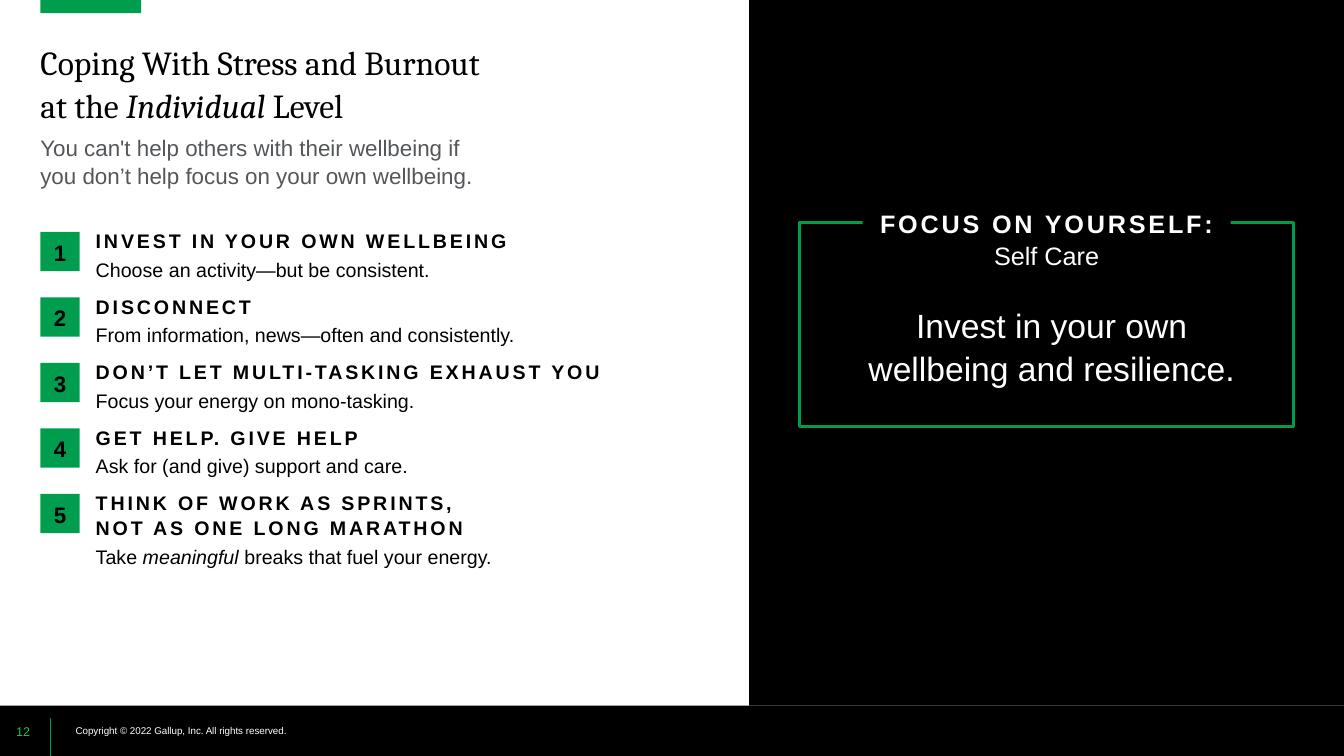
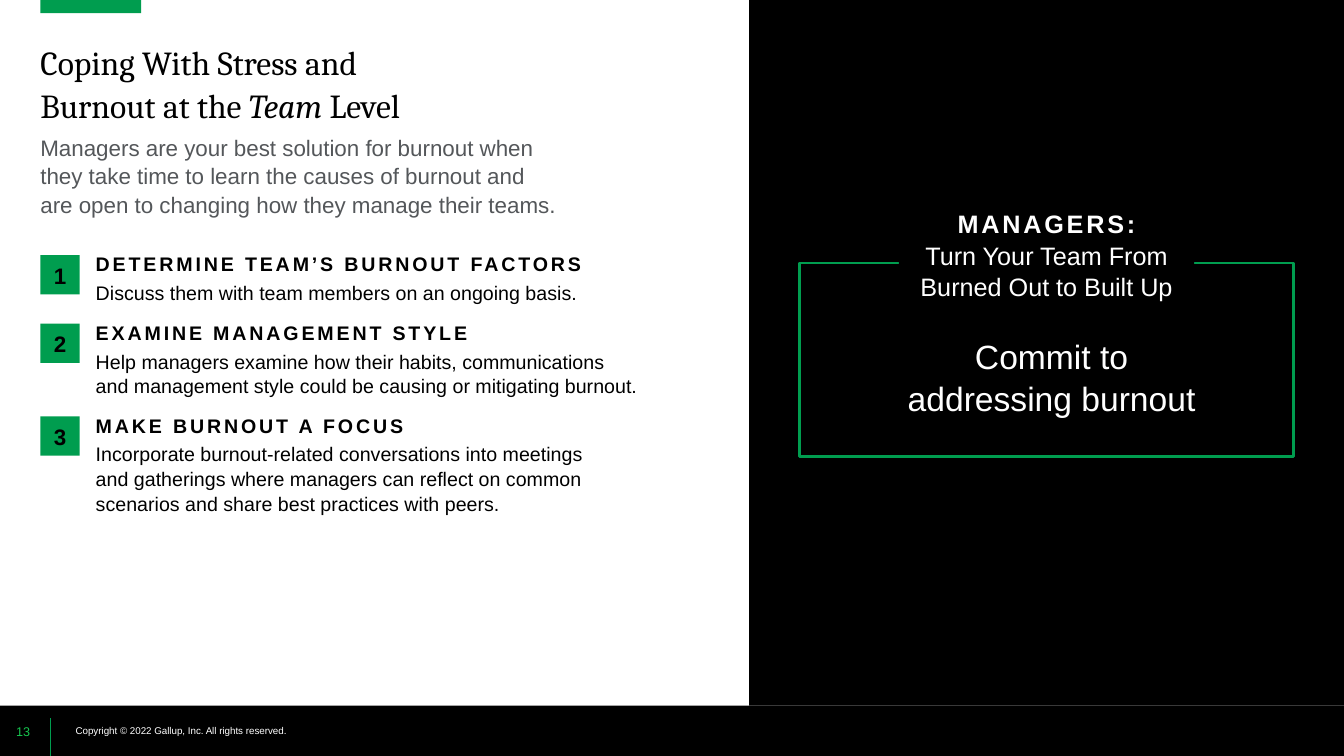
from lxml import etree
from pptx import Presentation
from pptx.dml.color import RGBColor
from pptx.enum.shapes import MSO_CONNECTOR, MSO_SHAPE
from pptx.enum.text import MSO_ANCHOR as Anchor, MSO_AUTO_SIZE as Fit, PP_ALIGN as Align
from pptx.oxml.ns import qn
from pptx.util import Inches, Pt

GREEN = RGBColor(0x00, 0x9D, 0x4F)
LIME = RGBColor(0x16, 0xC6, 0x4F)
BLACK = RGBColor(0, 0, 0)
WHITE = RGBColor(0xFF, 0xFF, 0xFF)
GRAY = RGBColor(0x54, 0x57, 0x5A)

LEFT = 0.4
MID = 10.38
LEAD = 1.05
BADGE = 0.39
LINE = 0.24
COPY = "Copyright © 2022 Gallup, Inc. All rights reserved."

SLIDES = [
    {
        "page": "12",
        "title": "Coping With Stress and Burnout\vat the *Individual* Level",
        "intro": "You can't help others with their wellbeing if\v"
                 "you don’t help focus on your own wellbeing.",
        "top": 2.26,
        "gap": 0.14,
        "items": [
            ("INVEST IN YOUR OWN WELLBEING", "Choose an activity—but be consistent."),
            ("DISCONNECT", "From information, news—often and consistently."),
            ("DON’T LET MULTI-TASKING EXHAUST YOU", "Focus your energy on mono-tasking."),
            ("GET HELP. GIVE HELP", "Ask for (and give) support and care."),
            ("THINK OF WORK AS SPRINTS,\vNOT AS ONE LONG MARATHON",
             "Take *meaningful* breaks that fuel your energy."),
        ],
        "label": ("FOCUS ON YOURSELF:", "Self Care"),
        "wide": 3.65,
        "box": (2.21, 2.02, 0.8),
        "goal": "Invest in your own wellbeing and resilience.",
    },
    {
        "page": "13",
        "title": "Coping With Stress and\vBurnout at the *Team* Level",
        "intro": "Managers are your best solution for burnout when\v"
                 "they take time to learn the causes of burnout and\v"
                 "are open to changing how they manage their teams.",
        "top": 2.49,
        "gap": 0.17,
        "items": [
            ("DETERMINE TEAM’S BURNOUT FACTORS",
             "Discuss them with team members on an ongoing basis."),
            ("EXAMINE MANAGEMENT STYLE",
             "Help managers examine how their habits, communications\v"
             "and management style could be causing or mitigating burnout."),
            ("MAKE BURNOUT A FOCUS",
             "Incorporate burnout-related conversations into meetings\v"
             "and gatherings where managers can reflect on common\v"
             "scenarios and share best practices with peers."),
        ],
        "label": ("MANAGERS:", "Turn Your Team From\vBurned Out to Built Up"),
        "wide": 2.93,
        "box": (2.61, 1.92, 0.7),
        "goal": "Commit to\vaddressing burnout",
    },
]


def place(shape, x, y, w, h):
    shape.left, shape.top = Inches(x), Inches(y)
    shape.width, shape.height = Inches(w), Inches(h)


def setup(shape, anchor=Anchor.TOP, inset=(0, 0, 0, 0), wrap=True):
    frame = shape.text_frame
    frame.auto_size = Fit.NONE
    frame.word_wrap = wrap
    frame.vertical_anchor = anchor
    sides = ("margin_left", "margin_top", "margin_right", "margin_bottom")
    for side, size in zip(sides, inset):
        setattr(frame, side, Inches(size))
    return frame


def write(par, text, size, color, font="Arial", bold=False, track=0, align=Align.LEFT):
    for part, words in enumerate(text.split("*")):
        for row, line in enumerate(words.split("\v")):
            if row:
                par.add_line_break()
            if line:
                run = par.add_run()
                run.text = line
                run.font.italic = part % 2 == 1
    for run in par.runs:
        run.font.size, run.font.name, run.font.bold = Pt(size), font, bold
        run.font.color.rgb = color
        if track:
            run._r.get_or_add_rPr().set("spc", str(track * 100))
    par.alignment = align
    par.line_spacing = LEAD
    par.space_before = Pt(0)


def add_rect(slide, x, y, w, h, fill=None, line=None):
    shape = slide.shapes.add_shape(
        MSO_SHAPE.RECTANGLE, Inches(x), Inches(y), Inches(w), Inches(h))
    shape.shadow.inherit = False
    if fill is None:
        shape.fill.background()
    else:
        shape.fill.solid()
        shape.fill.fore_color.rgb = fill
    if line is None:
        shape.line.fill.background()
    else:
        shape.line.color.rgb = line
        shape.line.width = Pt(2)
    return shape


def add_text(slide, x, y, w, h, **style):
    box = slide.shapes.add_textbox(Inches(x), Inches(y), Inches(w), Inches(h))
    return setup(box, **style)


def add_base(slide, page):
    add_rect(slide, 0, 7, 13.33, 0.5, BLACK)
    note = add_text(slide, 0.75, 7, 2.25, 0.5, anchor=Anchor.MIDDLE, wrap=False)
    write(note.paragraphs[0], COPY, 7, WHITE)
    rule = slide.shapes.add_connector(
        MSO_CONNECTOR.STRAIGHT, Inches(0.5), Inches(7.5), Inches(0.5), Inches(7.12))
    rule.line.color.rgb = GREEN
    rule.line.width = Pt(0.75)
    etree.SubElement(rule._element.spPr, qn("a:effectLst"))
    add_rect(slide, LEFT, 0, 1, 0.13, GREEN)
    num = add_text(slide, 0, 7, 0.46, 0.5, anchor=Anchor.MIDDLE)
    write(num.paragraphs[0], page, 9, LIME, align=Align.CENTER)


def add_head(slide, title, intro):
    head, body = slide.shapes.title, slide.placeholders[1]
    place(head, LEFT, 0.4, 6.9, 0.81)
    write(setup(head).paragraphs[0], title, 24, BLACK, font="Cambria")
    place(body, LEFT, 1.32, 6.9, 0.81)
    par = setup(body).paragraphs[0]
    props = par._p.get_or_add_pPr()
    props.set("marL", "0")
    props.set("indent", "0")
    etree.SubElement(props, qn("a:buNone"))
    write(par, intro, 16, GRAY)


def add_items(slide, items, top, gap):
    for num, (name, text) in enumerate(items, 1):
        rows = name.count("\v") + text.count("\v") + 2
        high = rows * LINE + 0.03
        frame = add_text(slide, 0.95, top, 6.3, high)
        write(frame.paragraphs[0], name, 14, BLACK, bold=True, track=2)
        frame.paragraphs[0].space_after = Pt(3)
        write(frame.add_paragraph(), text, 14, BLACK)
        badge = add_rect(slide, LEFT, top + 0.04, BADGE, BADGE, GREEN)
        mark = setup(badge, Anchor.MIDDLE).paragraphs[0]
        write(mark, str(num), 16, BLACK, bold=True, align=Align.CENTER)
        top += high + gap


def add_panel(slide, label, wide, box, goal):
    add_rect(slide, 7.43, 0, 5.9, 7, BLACK)
    top, high, inset = box
    card = add_rect(slide, 7.93, top, 4.9, high, line=GREEN)
    frame = setup(card, inset=(0.5, inset, 0.4, 0.4))
    write(frame.paragraphs[0], goal, 24, WHITE, align=Align.CENTER)
    name, text = label
    rows = text.count("\v") + 2
    tag = add_rect(slide, MID - wide / 2, 2.05, wide, rows * 0.3, BLACK)
    frame = setup(tag, inset=(0.1, 0, 0.1, 0))
    write(frame.paragraphs[0], name, 18, WHITE, bold=True, track=2, align=Align.CENTER)
    write(frame.add_paragraph(), text, 18, WHITE, align=Align.CENTER)


def main():
    deck = Presentation()
    deck.slide_width, deck.slide_height = Inches(13.33), Inches(7.5)
    for data in SLIDES:
        slide = deck.slides.add_slide(deck.slide_layouts[1])
        add_base(slide, data["page"])
        add_head(slide, data["title"], data["intro"])
        add_panel(slide, data["label"], data["wide"], data["box"], data["goal"])
        add_items(slide, data["items"], data["top"], data["gap"])
    deck.save("out.pptx")


if __name__ == "__main__":
    main()
